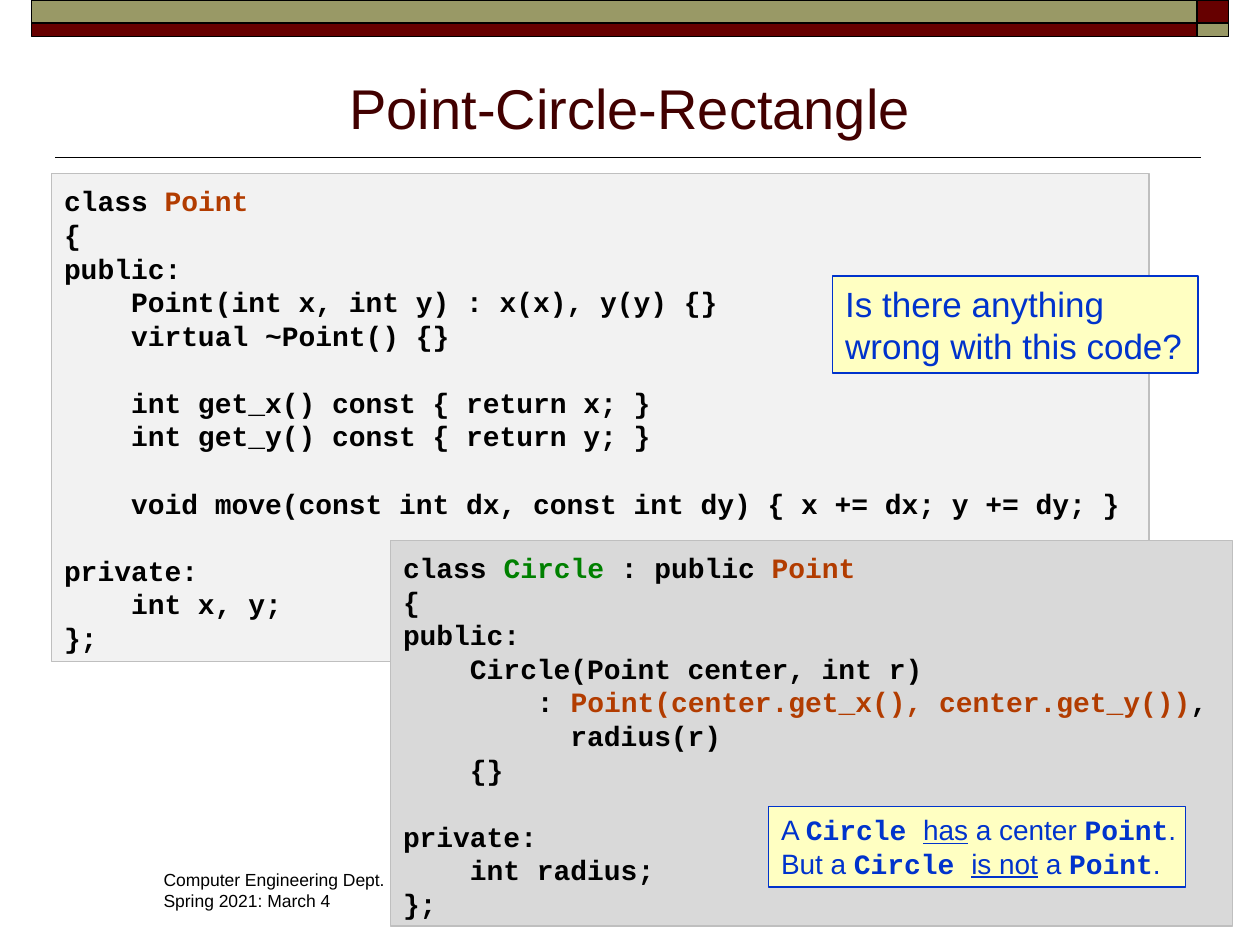
from lxml import etree
from pptx import Presentation
from pptx.dml.color import RGBColor
from pptx.enum.shapes import MSO_CONNECTOR, MSO_SHAPE
from pptx.enum.text import MSO_ANCHOR, PP_ALIGN
from pptx.oxml.ns import qn
from pptx.util import Pt

PX = 9144  # 100 px to the inch

BLACK = RGBColor(0x00, 0x00, 0x00)
MAROON = RGBColor(0x66, 0x00, 0x00)
OLIVE = RGBColor(0x99, 0x99, 0x66)
TITLE_BROWN = RGBColor(0x42, 0x00, 0x00)
LIGHT_GREY = RGBColor(0xF2, 0xF2, 0xF2)
MID_GREY = RGBColor(0xD9, 0xD9, 0xD9)
EDGE_GREY = RGBColor(0xBF, 0xBF, 0xBF)
RUST = RGBColor(0xB2, 0x3C, 0x00)
GREEN = RGBColor(0x00, 0x80, 0x00)
BLUE = RGBColor(0x00, 0x33, 0xCC)
YELLOW = RGBColor(0xFF, 0xFF, 0xC2)

SANS, MONO = "Arial", "Courier New"
LEADING = 1.2  # line pitch relative to text size

# Each code line is a list of (text, colour) runs; an empty list is a blank line
POINT_CODE = [
    [("class ", BLACK), ("Point", RUST)],
    [("{", BLACK)],
    [("public:", BLACK)],
    [("    Point(int x, int y) : x(x), y(y) {}", BLACK)],
    [("    virtual ~Point() {}", BLACK)],
    [],
    [("    int get_x() const { return x; }", BLACK)],
    [("    int get_y() const { return y; }", BLACK)],
    [],
    [("    void move(const int dx, const int dy) { x += dx; y += dy; }", BLACK)],
    [],
    [("private:", BLACK)],
    [("    int x, y;", BLACK)],
    [("};", BLACK)],
]
CIRCLE_CODE = [
    [("class ", BLACK), ("Circle", GREEN), (" : public", BLACK), (" Point", RUST)],
    [("{", BLACK)],
    [("public:", BLACK)],
    [("    Circle(Point center, int r)", BLACK)],
    [("        : ", BLACK), ("Point(center.get_x(), center.get_y())", RUST), (",", BLACK)],
    [("          radius(r)", BLACK)],
    [("    {}", BLACK)],
    [],
    [("private:", BLACK)],
    [("    int radius;", BLACK)],
    [("};", BLACK)],
]

# Each remark line is a list of (text, style) runs
PLAIN, CODE, STRESS = "plain", "code", "stress"
QUESTION = [[("Is there anything", PLAIN)], [("wrong with this code?", PLAIN)]]
ANSWER = [
    [("A ", PLAIN), ("Circle ", CODE), ("has", STRESS), (" a center ", PLAIN),
     ("Point", CODE), (".", PLAIN)],
    [("But a ", PLAIN), ("Circle ", CODE), ("is not", STRESS), (" a ", PLAIN),
     ("Point", CODE), (".", PLAIN)],
]


def add_run(paragraph, text, size, color, font=SANS, bold=False, underline=False):
    run = paragraph.add_run()
    run.text = text
    run.font.name = font
    run.font.size = Pt(size)
    run.font.color.rgb = color
    run.font.bold = bold
    run.font.underline = underline


def add_panel(slide, box, fill, edge, edge_width=0.75):
    panel = slide.shapes.add_shape(MSO_SHAPE.RECTANGLE, *(v * PX for v in box))
    panel.shadow.inherit = False
    panel.fill.solid()
    panel.fill.fore_color.rgb = fill
    panel.line.color.rgb = edge
    panel.line.width = Pt(edge_width)
    return panel


def set_frame(shape, top=5):
    frame = shape.text_frame
    frame.word_wrap = True
    frame.vertical_anchor = MSO_ANCHOR.TOP
    frame.margin_left, frame.margin_right = 10 * PX, 0
    frame.margin_top, frame.margin_bottom = top * PX, 0
    return frame


def next_paragraph(frame, index):
    paragraph = frame.add_paragraph() if index else frame.paragraphs[0]
    paragraph.alignment = PP_ALIGN.LEFT
    return paragraph


def add_header_band(slide, box):
    left, top, width, height = box
    corner, upper = 25, 18
    main, lower = width - corner, height - upper
    for x, y, w, h, fill in [
        (main, 0, corner, upper, MAROON),
        (0, 0, main, upper, OLIVE),
        (0, upper, main, lower, MAROON),
        (main, upper, corner, lower, OLIVE),
    ]:
        add_panel(slide, (left + x, top + y, w, h), fill, BLACK, 1)


def add_title(slide, box, text):
    left, top, width, height = box
    title = slide.shapes.title
    title.left, title.top, title.width, title.height = (v * PX for v in box)
    title.text_frame.vertical_anchor = MSO_ANCHOR.BOTTOM
    heading = title.text_frame.paragraphs[0]
    heading.alignment = PP_ALIGN.CENTER
    add_run(heading, text, 32, TITLE_BROWN)
    # Rule under the title
    rule_y = (top + height + 8) * PX
    rule = slide.shapes.add_connector(
        MSO_CONNECTOR.STRAIGHT, (left + width + 3) * PX, rule_y, (left - 6) * PX, rule_y)
    rule.line.color.rgb = BLACK
    rule.line.width = Pt(1)
    etree.SubElement(rule._element.spPr, qn("a:effectLst"))


def add_footer(slide, box, lines):
    footer = slide.shapes.add_textbox(*(v * PX for v in box))
    frame = set_frame(footer)
    for index, line in enumerate(lines):
        add_run(next_paragraph(frame, index), line, 10, BLACK)


def add_code(slide, box, fill, lines, size=16):
    frame = set_frame(add_panel(slide, box, fill, EDGE_GREY), top=8)
    pitch = size * LEADING
    blanks = count = 0
    for line in lines:
        if not line:
            blanks += 1
            continue
        paragraph = next_paragraph(frame, count)
        paragraph.line_spacing = Pt(pitch)
        paragraph.space_before = Pt(blanks * pitch)
        for text, color in line:
            add_run(paragraph, text, size, color, MONO, bold=True)
        count, blanks = count + 1, 0


def add_remark(slide, box, lines, size):
    frame = set_frame(add_panel(slide, box, YELLOW, BLUE))
    for index, line in enumerate(lines):
        paragraph = next_paragraph(frame, index)
        paragraph.line_spacing = Pt(size * LEADING)
        for text, style in line:
            add_run(paragraph, text, size, BLUE, MONO if style == CODE else SANS,
                    bold=style == CODE, underline=style == STRESS)


def main():
    deck = Presentation()
    deck.slide_width, deck.slide_height = 1000 * PX, 750 * PX
    slide = deck.slides.add_slide(deck.slide_layouts[5])

    add_header_band(slide, (25, 0, 950, 29))
    add_title(slide, (50, 45, 900, 72), "Point-Circle-Rectangle")
    add_footer(slide, (120, 685, 197, 44),
               ["Computer Engineering Dept.", "Spring 2021: March 4"])
    add_code(slide, (41, 138, 871, 387), LIGHT_GREY, POINT_CODE)
    add_code(slide, (310, 429, 668, 306), MID_GREY, CIRCLE_CODE)
    add_remark(slide, (661, 219, 290, 77), QUESTION, 20)
    add_remark(slide, (610, 640, 331, 64), ANSWER, 16)

    deck.save("out.pptx")


if __name__ == "__main__":
    main()
